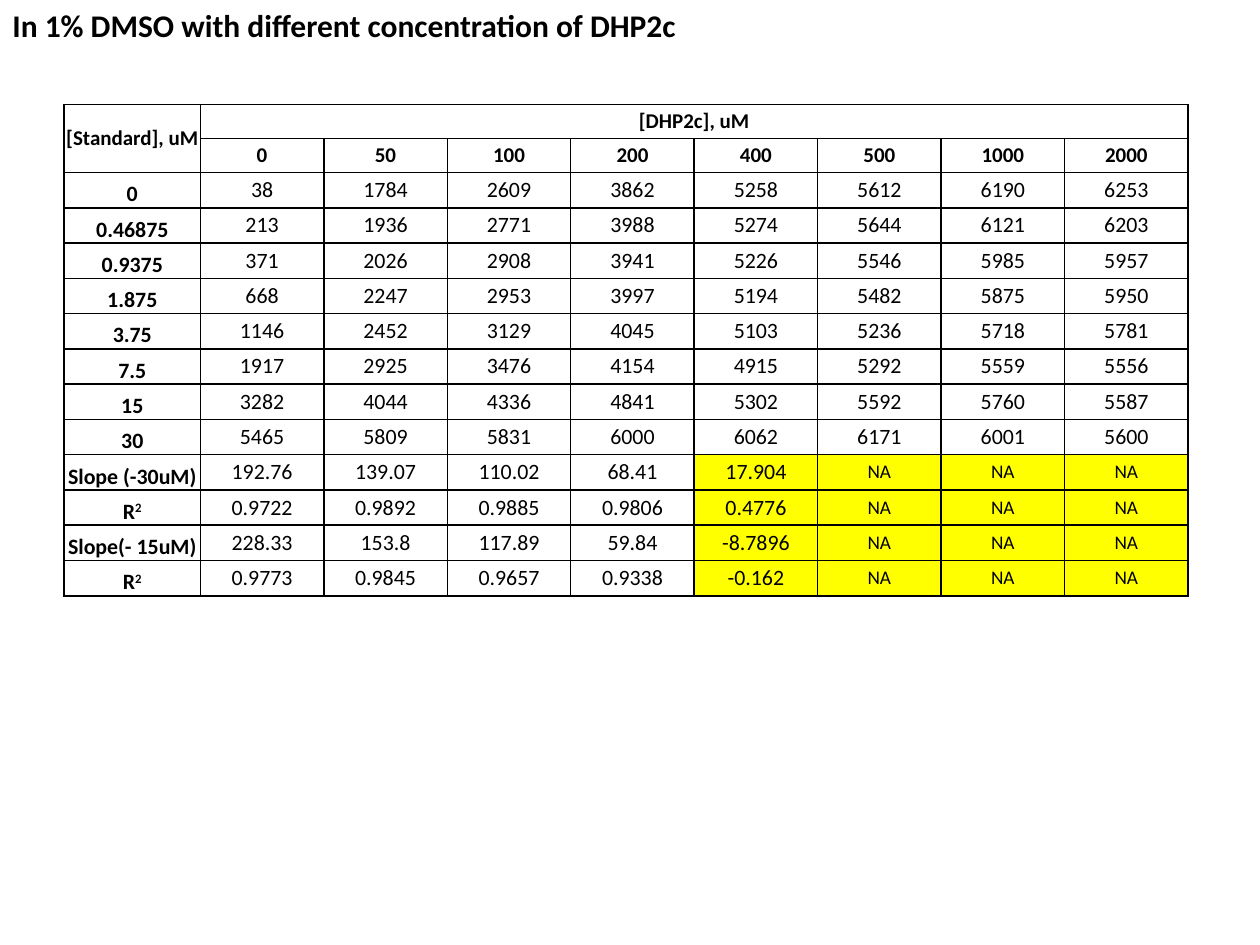
from lxml import etree
from pptx import Presentation
from pptx.dml.color import RGBColor
from pptx.enum.text import MSO_ANCHOR, MSO_AUTO_SIZE, PP_ALIGN
from pptx.oxml.ns import qn
from pptx.util import Inches, Pt

BLACK = RGBColor(0x00, 0x00, 0x00)
YELLOW = RGBColor(0xFF, 0xFF, 0x00)
MIDDLE = MSO_ANCHOR.MIDDLE
BOTTOM = MSO_ANCHOR.BOTTOM
CENTER = PP_ALIGN.CENTER
NO_AUTOFIT_WRAP = MSO_AUTO_SIZE.SHAPE_TO_FIT_TEXT
FONT = "Calibri"
HEADER_ROWS = 2
FIRST_SLOPE_ROW = 10
FIRST_POOR_FIT_COLUMN = 5

ROWS = [
    ["[Standard], uM", "[DHP2c], uM", "", "", "", "", "", "", ""],
    ["", "0", "50", "100", "200", "400", "500", "1000", "2000"],
    ["0", "38", "1784", "2609", "3862", "5258", "5612", "6190", "6253"],
    ["0.46875", "213", "1936", "2771", "3988", "5274", "5644", "6121", "6203"],
    ["0.9375", "371", "2026", "2908", "3941", "5226", "5546", "5985", "5957"],
    ["1.875", "668", "2247", "2953", "3997", "5194", "5482", "5875", "5950"],
    ["3.75", "1146", "2452", "3129", "4045", "5103", "5236", "5718", "5781"],
    ["7.5", "1917", "2925", "3476", "4154", "4915", "5292", "5559", "5556"],
    ["15", "3282", "4044", "4336", "4841", "5302", "5592", "5760", "5587"],
    ["30", "5465", "5809", "5831", "6000", "6062", "6171", "6001", "5600"],
    ["Slope (-30uM)", "192.76", "139.07", "110.02", "68.41", "17.904", "NA", "NA", "NA"],
    ["R", "0.9722", "0.9892", "0.9885", "0.9806", "0.4776", "NA", "NA", "NA"],
    ["Slope(- 15uM)", "228.33", "153.8", "117.89", "59.84", "-8.7896", "NA", "NA", "NA"],
    ["R", "0.9773", "0.9845", "0.9657", "0.9338", "-0.162", "NA", "NA", "NA"],
]


def format_span(span, size, bold):
    span.font.name = FONT
    span.font.size = Pt(size)
    span.font.bold = bold
    span.font.color.rgb = BLACK


def add_borders(cell):
    properties = cell._tc.get_or_add_tcPr()
    for side in ("a:lnL", "a:lnR", "a:lnT", "a:lnB"):
        line = etree.SubElement(properties, qn(side), w=str(Pt(1)))
        fill = etree.SubElement(line, qn("a:solidFill"))
        etree.SubElement(fill, qn("a:srgbClr"), val=str(BLACK))


deck = Presentation()
deck.slide_width = Inches(10)
deck.slide_height = Inches(7.5)
page = deck.slides.add_slide(deck.slide_layouts[6])

table = page.shapes.add_table(
    len(ROWS), len(ROWS[0]), Inches(0.51), Inches(0.83), Inches(8.92), Inches(3.9)
).table
table.first_row = False
table.horz_banding = False
for index, column in enumerate(table.columns):
    column.width = Inches(1.08 if index == 0 else 0.98)
for index, row in enumerate(table.rows):
    row.height = Inches(0.27 if index < HEADER_ROWS else 0.28)

for row_index, values in enumerate(ROWS):
    for column_index, value in enumerate(values):
        is_header = row_index < HEADER_ROWS
        is_label = column_index == 0
        cell = table.cell(row_index, column_index)
        cell.margin_left = cell.margin_right = 0
        cell.margin_top = cell.margin_bottom = 0
        cell.vertical_anchor = BOTTOM if is_label and not is_header else MIDDLE
        add_borders(cell)
        if row_index >= FIRST_SLOPE_ROW and column_index >= FIRST_POOR_FIT_COLUMN:
            cell.fill.solid()
            cell.fill.fore_color.rgb = YELLOW
        else:
            cell.fill.background()

        para = cell.text_frame.paragraphs[0]
        para.text = value
        para.alignment = CENTER
        if value == "R":
            exponent = para.add_run()
            exponent.text = "2"
            exponent.font._element.set("baseline", "30000")
        size = 12 if is_header else 11 if value == "NA" else 12.5
        for span in para.runs:
            format_span(span, size, is_header or is_label)

table.cell(0, 0).merge(table.cell(1, 0))
table.cell(0, 1).merge(table.cell(0, len(ROWS[0]) - 1))

box = page.shapes.add_textbox(0, 0, Inches(5.72), Inches(0.4))
box.text_frame.text = "In 1% DMSO with different concentration of DHP2c"
box.text_frame.word_wrap = False
box.text_frame.auto_size = NO_AUTOFIT_WRAP
format_span(box.text_frame.paragraphs[0].runs[0], 18, True)

deck.save("out.pptx")
